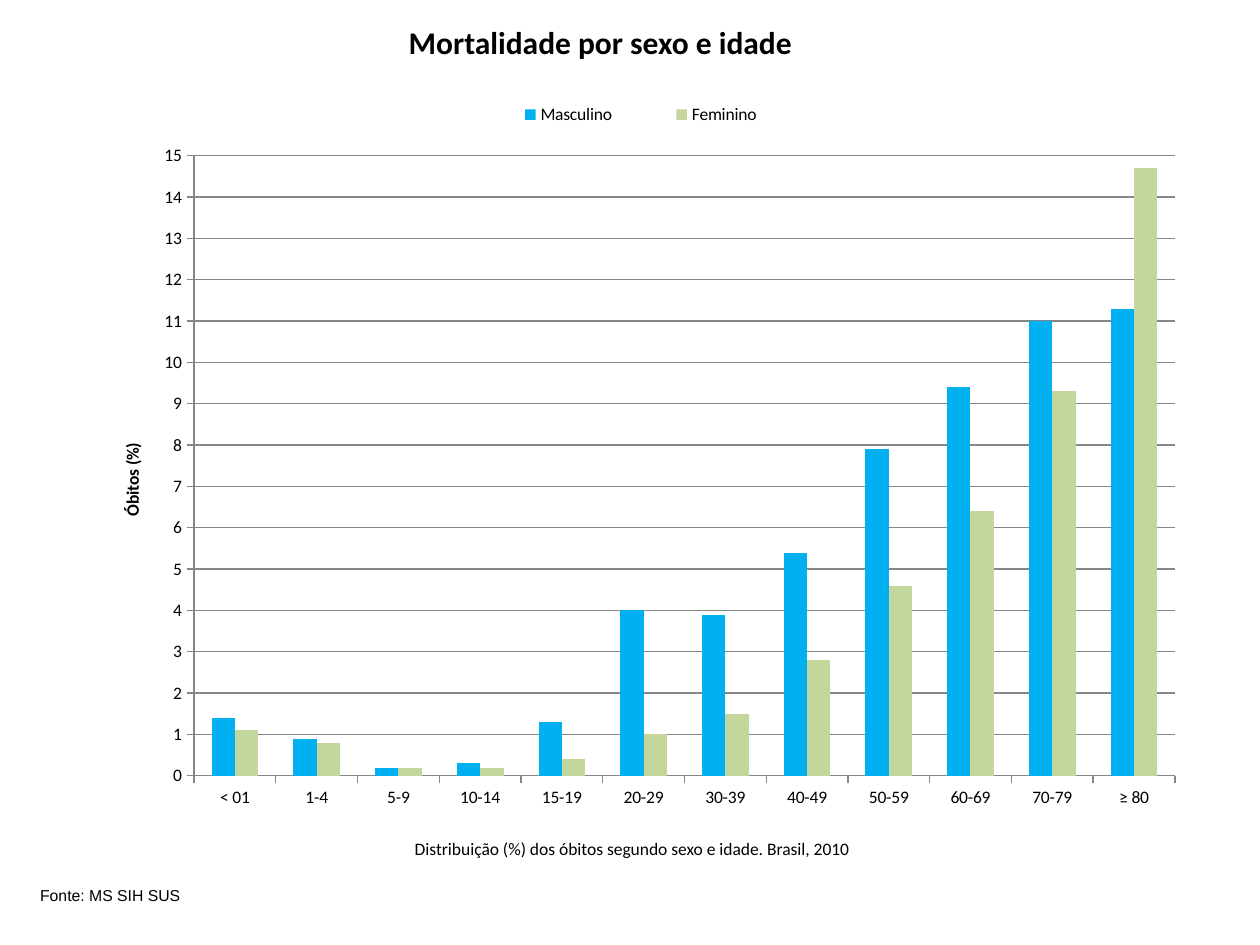
from lxml import etree
from pptx import Presentation
from pptx.chart.data import CategoryChartData
from pptx.dml.color import RGBColor
from pptx.enum import chart as chart_enum, text
from pptx.oxml import parse_xml
from pptx.oxml.ns import nsdecls, qn
from pptx.util import Inches, Pt

BLACK, GRAY = "000000", "868686"


def write_text(shape, content, size, font, align, bold=False):
    frame = shape.text_frame
    frame.word_wrap = True
    frame.vertical_anchor = text.MSO_ANCHOR.TOP
    frame.text = content
    paragraph = frame.paragraphs[0]
    paragraph.alignment = align
    run_font = paragraph.runs[0].font
    run_font.size, run_font.name, run_font.bold = Pt(size), font, bold
    run_font.color.rgb = RGBColor.from_string(BLACK)


def place_in_chart(element, index, inner=False, **fractions):
    """Give a chart part a manual layout in fractions of the chart area."""
    for old in element.findall(qn("c:layout")):
        element.remove(old)
    layout = parse_xml(f"<c:layout {nsdecls('c')}><c:manualLayout/></c:layout>")
    settings = {"layoutTarget": "inner"} if inner else {}
    settings.update(xMode="edge", yMode="edge", **fractions)
    for name, value in settings.items():
        etree.SubElement(layout[0], qn(f"c:{name}")).set("val", str(value))
    element.insert(index, layout)


presentation = Presentation()
presentation.slide_width, presentation.slide_height = Inches(10), Inches(7.5)
slide = presentation.slides.add_slide(presentation.slide_layouts[5])

title = slide.shapes.title
title.left, title.top = Inches(1.93), Inches(0.13)
title.width, title.height = Inches(5.67), Inches(0.4)
write_text(title, "Mortalidade por sexo e idade", 18, "Calibri",
           text.PP_ALIGN.CENTER, bold=True)

# Deaths by sex and age group
series_rows = [
    ("Masculino", "00B0F0", [1.4, 0.9, 0.2, 0.3, 1.3, 4, 3.9, 5.4, 7.9, 9.4, 11, 11.3]),
    ("Feminino", "C3D69B", [1.1, 0.8, 0.2, 0.2, 0.4, 1, 1.5, 2.8, 4.6, 6.4, 9.3, 14.7]),
]
data = CategoryChartData()
data.categories = ["< 01", "1-4", "5-9", "10-14", "15-19", "20-29",
                   "30-39", "40-49", "50-59", "60-69", "70-79", "≥ 80"]
for name, _, values in series_rows:
    data.add_series(name, values)
chart = slide.shapes.add_chart(
    chart_enum.XL_CHART_TYPE.COLUMN_CLUSTERED,
    Inches(0.67), Inches(0.52), Inches(8.66), Inches(5.94), data).chart
chart.has_title = False
chart.font.size, chart.font.name = Pt(10), "Calibri"
chart.font.color.rgb = RGBColor.from_string(BLACK)

plot = chart.plots[0]
plot.gap_width, plot.overlap, plot.vary_by_categories = 150, 0, False
for series, (_, color, _) in zip(plot.series, series_rows):
    series.format.fill.solid()
    series.format.fill.fore_color.rgb = RGBColor.from_string(color)

value_axis, category_axis = chart.value_axis, chart.category_axis
value_axis.minimum_scale, value_axis.maximum_scale, value_axis.major_unit = 0, 15, 1
value_axis.tick_labels.number_format = "0"
value_axis.tick_labels.number_format_is_linked = False
value_axis.has_major_gridlines = True
for axis in (value_axis, category_axis):
    axis.major_tick_mark = chart_enum.XL_TICK_MARK.OUTSIDE
for line in (value_axis.format.line, category_axis.format.line,
             value_axis.major_gridlines.format.line):
    line.width = Pt(0.75)
    line.color.rgb = RGBColor.from_string(GRAY)

axis_title = value_axis.axis_title
axis_title.text_frame.text = "Óbitos (%)"
title_font = axis_title.text_frame.paragraphs[0].runs[0].font
title_font.size, title_font.name, title_font.bold = Pt(10), "Calibri", True
title_font.color.rgb = RGBColor.from_string(BLACK)

chart.has_legend = True
chart.legend.position = chart_enum.XL_LEGEND_POSITION.LEFT
chart.legend.include_in_layout = True

chart_space = chart._chartSpace
plot_area = chart_space.find(f".//{qn('c:plotArea')}")
place_in_chart(plot_area, 0, inner=True, x=0.1, y=0.12, w=0.9, h=0.83)
place_in_chart(chart.legend._element, 1, x=0.35, y=0.04, w=0.32, h=0.05)
place_in_chart(axis_title._element, 1, x=0.03, y=0.5)

chart_space.find(qn("c:chart")).addnext(parse_xml(
    f'<c:spPr {nsdecls("c", "a")}><a:ln w="9525"><a:solidFill>'
    '<a:srgbClr val="FFFFFF"/></a:solidFill></a:ln></c:spPr>'))

notes = [
    (0.76, 6.6, 8.51, 0.27, "Distribuição (%) dos óbitos segundo sexo e idade. Brasil, 2010",
     10, "Calibri", text.PP_ALIGN.CENTER),
    (0.22, 6.98, 8.95, 0.25, "Fonte: MS SIH SUS", 9, "Arial", text.PP_ALIGN.LEFT),
]
for left, top, width, height, content, size, font, align in notes:
    box = slide.shapes.add_textbox(Inches(left), Inches(top), Inches(width), Inches(height))
    write_text(box, content, size, font, align)

presentation.save("out.pptx")
